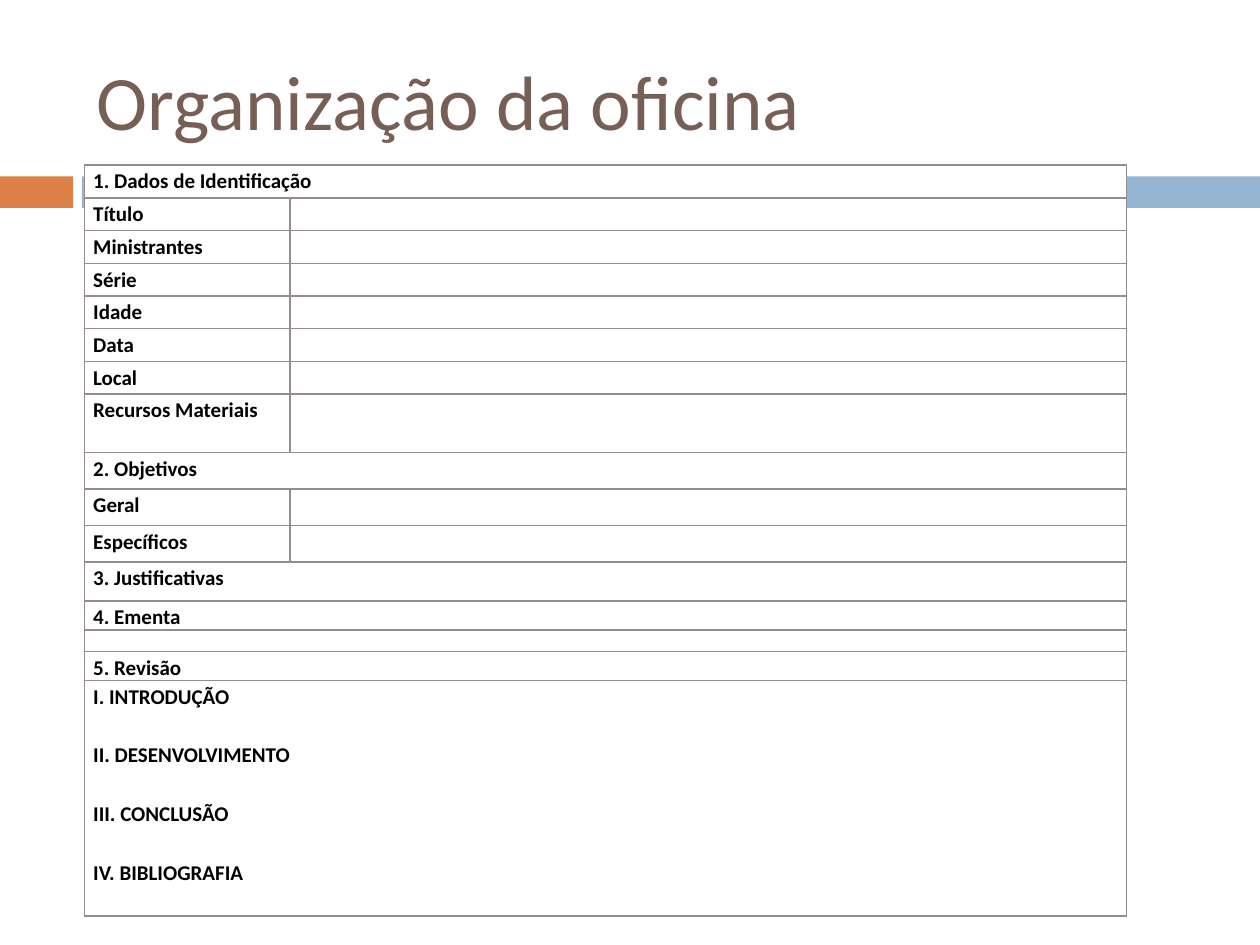
from dataclasses import dataclass

from lxml import etree
from pptx import Presentation
from pptx.dml.color import RGBColor
from pptx.enum.shapes import MSO_SHAPE as Shape
from pptx.enum.text import MSO_ANCHOR as Anchor, PP_ALIGN as Align
from pptx.oxml.ns import qn
from pptx.util import Inches, Pt


@dataclass(frozen=True)
class Theme:
    """Colours, fonts and type sizes of the slide."""
    font: str = "Calibri"
    title_size: float = 44
    cell_size: float = 12
    title: str = "775F55"
    text: str = "000000"
    paper: str = "FFFFFF"
    accent: str = "DD8047"
    band: str = "94B6D2"
    border: str = "968C8C"
    border_width: float = 1
    line_spacing: float = 1.15
    section_gap: float = 16.7


THEME = Theme()
FORM_LEFT, FORM_WIDTH, LABEL_WIDTH = 0.67, 8.27, 1.63


def style_font(para, size, color, bold=False):
    """Set the font of a whole paragraph."""
    para.font.name = THEME.font
    para.font.size = Pt(size)
    para.font.bold = bold
    para.font.color.rgb = RGBColor.from_string(color)


def add_bar(page, box, color):
    """Draw one plain coloured bar in the box."""
    bar = page.shapes.add_shape(Shape.RECTANGLE, *map(Inches, box))
    bar.shadow.inherit = False
    bar.fill.solid()
    bar.fill.fore_color.rgb = RGBColor.from_string(color)
    bar.line.fill.background()


def add_band(page, box):
    """Draw the accent block and the long bar beside it."""
    left, top, width, height = box
    accent_width, band_offset = 0.58, 0.65
    add_bar(page, (left, top, accent_width, height), THEME.accent)
    add_bar(page, (left + band_offset, top, width - band_offset, height), THEME.band)


def add_title(page, box, text):
    """Place the slide title, centred vertically in the box."""
    frame = page.shapes.add_textbox(*map(Inches, box)).text_frame
    frame.word_wrap = True
    frame.vertical_anchor = Anchor.MIDDLE
    frame.text = text
    style_font(frame.paragraphs[0], THEME.title_size, THEME.title)


def add_borders(cell):
    """Outline a cell on its four sides."""
    properties = cell._tc.get_or_add_tcPr()
    for index, side in enumerate(("lnL", "lnR", "lnT", "lnB")):
        line = etree.Element(qn(f"a:{side}"), w=str(Pt(THEME.border_width)))
        fill = etree.SubElement(line, qn("a:solidFill"))
        etree.SubElement(fill, qn("a:srgbClr"), val=THEME.border)
        properties.insert(index, line)


def style_cell(cell, text):
    """Write bold text in a white bordered cell, one paragraph per line."""
    cell.margin_left = cell.margin_right = Inches(0.07)
    cell.margin_top = cell.margin_bottom = 0
    cell.fill.solid()
    cell.fill.fore_color.rgb = RGBColor.from_string(THEME.paper)
    cell.text_frame.text = text
    paras = cell.text_frame.paragraphs
    for para in paras:
        style_font(para, THEME.cell_size, THEME.text, bold=True)
        para.alignment = Align.JUSTIFY
        para.line_spacing = THEME.line_spacing
        if len(paras) > 1:
            para.space_after = Pt(THEME.section_gap)
    add_borders(cell)


def add_form(page, box, labels, heights, has_values=False):
    """Build a form table with a heading row, then label rows."""
    left, top, width = box
    widths = [LABEL_WIDTH, width - LABEL_WIDTH] if has_values else [width]
    frame = page.shapes.add_table(len(labels), len(widths), Inches(left), Inches(top),
                                  Inches(width), Inches(sum(heights)))
    table = frame.table
    table.first_row = table.horz_banding = False
    for column, size in zip(table.columns, widths):
        column.width = Inches(size)
    for row, label, height in zip(table.rows, labels, heights):
        row.height = Inches(height)
        for index, cell in enumerate(row.cells):
            style_cell(cell, "" if index else label)
    if has_values:
        table.cell(0, 0).merge(table.cell(0, 1))


def main():
    """Build the workshop plan slide and save it."""
    deck = Presentation()
    deck.slide_width, deck.slide_height = Inches(10), Inches(7.5)
    page = deck.slides.add_slide(deck.slide_layouts[6])
    add_band(page, (0, 1.4, 10, 0.25))
    add_title(page, (0.67, 0.25, 8.92, 1.08), "Organização da oficina")

    identification = ["1. Dados de Identificação", "Título", "Ministrantes", "Série",
                      "Idade", "Data", "Local", "Recursos Materiais"]
    goals = ["2. Objetivos", "Geral", "Específicos"]
    review = "I. INTRODUÇÃO\nII. DESENVOLVIMENTO\nIII. CONCLUSÃO\nIV. BIBLIOGRAFIA"
    forms = [
        (1.31, identification, [0.26] * 7 + [0.52], True),
        (3.59, goals, [0.29] * 3, True),
        (4.46, ["3. Justificativas", ""], [0.37, 0.39], False),
        (4.77, ["4. Ementa", ""], [0.23, 0.23], False),
        (5.17, ["5. Revisão", review], [0.23, 1.87], False),
    ]
    for top, labels, heights, has_values in forms:
        add_form(page, (FORM_LEFT, top, FORM_WIDTH), labels, heights, has_values)
    deck.save("out.pptx")


if __name__ == "__main__":
    main()
